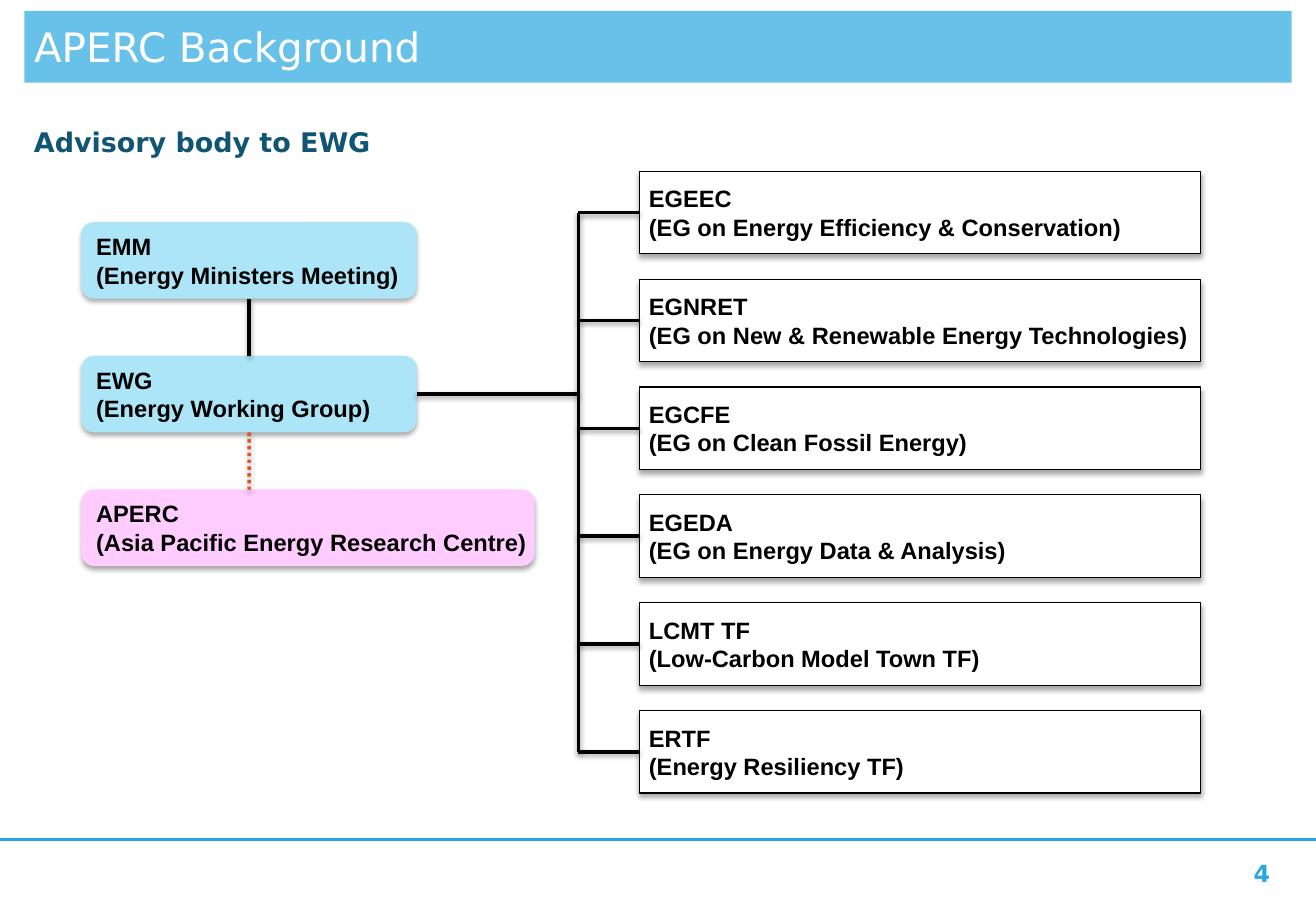
from lxml import etree
from pptx import Presentation
from pptx.dml.color import RGBColor
from pptx.enum.dml import MSO_LINE
from pptx.enum.shapes import MSO_CONNECTOR, MSO_SHAPE
from pptx.enum.text import MSO_ANCHOR, MSO_AUTO_SIZE, PP_ALIGN
from pptx.oxml.ns import qn
from pptx.util import Inches, Pt

RECT, ROUND = MSO_SHAPE.RECTANGLE, MSO_SHAPE.ROUNDED_RECTANGLE
STRAIGHT = MSO_CONNECTOR.STRAIGHT
DOTS = MSO_LINE.ROUND_DOT
MIDDLE = MSO_ANCHOR.MIDDLE
LEFT, CENTER = PP_ALIGN.LEFT, PP_ALIGN.CENTER
TOP, WEST, BOTTOM, EAST = range(4)

COLORS = {
    "accent": "28A7E1", "heading": "105574", "white": "FFFFFF", "black": "000000",
    "blue": "ABE5F7", "pink": "FFCCFF", "orange": "DF5327",
}
HEAD_FONT, BOX_FONT = "DejaVu Sans", "Arial"

BODIES = [
    ("EMM", "(Energy Ministers Meeting)", 2.76, "blue"),
    ("EWG", "(Energy Working Group)", 2.76, "blue"),
    ("APERC", "(Asia Pacific Energy Research Centre)", 3.73, "pink"),
]
GROUPS = [
    ("EGEEC", "(EG on Energy Efficiency & Conservation)"),
    ("EGNRET", "(EG on New & Renewable Energy Technologies)"),
    ("EGCFE", "(EG on Clean Fossil Energy)"),
    ("EGEDA", "(EG on Energy Data & Analysis)"),
    ("LCMT TF", "(Low-Carbon Model Town TF)"),
    ("ERTF", "(Energy Resiliency TF)"),
]
BODY_TOP, BODY_STEP = 1.83, 1.1
GROUP_TOP, GROUP_END = 1.41, 5.85
TRUNK = 4.76


def rgb(name):
    return RGBColor.from_string(COLORS[name])


def add_shadow(shape, alpha, dist):
    """Add a soft shadow below; call after fill and line are set."""
    effects = etree.SubElement(shape._element.spPr, qn("a:effectLst"))
    outer = etree.SubElement(effects, qn("a:outerShdw"), blurRad=str(Pt(3.1)),
                             dist=str(Pt(dist)), dir="5400000", rotWithShape="0")
    color = etree.SubElement(outer, qn("a:srgbClr"), val=COLORS["black"])
    etree.SubElement(color, qn("a:alpha"), val=str(alpha * 1000))


def set_text(shape, lines, font, size, color, bold=True, align=LEFT, pad=(0.08, 0)):
    frame = shape.text_frame
    frame.auto_size = MSO_AUTO_SIZE.NONE
    frame.word_wrap = True
    frame.vertical_anchor = MIDDLE
    frame.margin_left, frame.margin_right = Inches(pad[0]), Inches(pad[1])
    frame.margin_top = frame.margin_bottom = 0
    for i, line in enumerate(lines):
        para = frame.add_paragraph() if i else frame.paragraphs[0]
        para.alignment = align
        run = para.add_run()
        run.text = line
        run.font.name, run.font.size, run.font.bold = font, Pt(size), bold
        run.font.color.rgb = rgb(color)


def add_title(slide, text):
    title = slide.shapes.title
    title.left, title.top = Inches(0.2), Inches(0.09)
    title.width, title.height = Inches(10.43), Inches(0.59)
    title.fill.solid()
    title.fill.fore_color.rgb = rgb("accent")
    color = title._element.spPr.find(qn("a:solidFill"))[0]
    etree.SubElement(color, qn("a:alpha"), val="70000")
    set_text(title, [text], HEAD_FONT, 24, "white", bold=False)


def add_label(slide, text, box, size, color, align=LEFT):
    label = slide.shapes.add_textbox(*map(Inches, box))
    set_text(label, [text], HEAD_FONT, size, color, align=align)


def add_box(slide, kind, box, lines, fill, pad, edge=None):
    shape = slide.shapes.add_shape(kind, *map(Inches, box))
    shape.fill.solid()
    shape.fill.fore_color.rgb = rgb(fill)
    if edge:
        shape.line.color.rgb = rgb(edge)
        shape.line.width = Pt(0.75)
    else:
        shape.line.fill.background()
    add_shadow(shape, 35, 1.8)
    set_text(shape, lines, BOX_FONT, 14, "black", pad=(pad, 0))
    return shape


def add_line(slide, start, end, color="black", width=2, dash=None, shadow=True):
    """Draw a line; each end is an (x, y) point or a (shape, side) pair."""
    line = slide.shapes.add_connector(STRAIGHT, 0, 0, 0, 0)
    if isinstance(start[0], (int, float)):
        line.begin_x, line.begin_y = map(Inches, start)
    else:
        line.begin_connect(*start)
    if isinstance(end[0], (int, float)):
        line.end_x, line.end_y = map(Inches, end)
    else:
        line.end_connect(*end)
    line.line.color.rgb = rgb(color)
    line.line.width = Pt(width)
    if dash:
        line.line.dash_style = dash
    if shadow:
        add_shadow(line, 38, 1.6)
    else:
        etree.SubElement(line._element.spPr, qn("a:effectLst"))


def add_chain(slide):
    """Stack the main bodies, link them and return the working group."""
    boxes = [
        add_box(slide, ROUND, (0.67, BODY_TOP + i * BODY_STEP, width, 0.63),
                (name, note), fill, 0.09)
        for i, (name, note, width, fill) in enumerate(BODIES)
    ]
    meeting, working, centre = boxes
    add_line(slide, (meeting, BOTTOM), (working, TOP))
    add_line(slide, (working, BOTTOM), (2.05, centre.top.inches), "orange", dash=DOTS)
    return working


def add_groups(slide, working):
    """Stack the expert groups and branch to them from the trunk."""
    step = (GROUP_END - GROUP_TOP) / (len(GROUPS) - 1)
    mids = []
    for i, lines in enumerate(GROUPS):
        top = GROUP_TOP + i * step
        box = add_box(slide, RECT, (5.26, top, 4.62, 0.68), lines, "white", 0.08, "black")
        mids.append(top + 0.34)
        add_line(slide, (TRUNK, mids[-1]), (box, WEST))
    add_line(slide, (TRUNK, mids[0]), (TRUNK, mids[-1]))
    add_line(slide, (working, EAST), (TRUNK, BODY_TOP + BODY_STEP + 0.315))


def main():
    deck = Presentation()
    deck.slide_width, deck.slide_height = Inches(10.83), Inches(7.5)
    slide = deck.slides.add_slide(deck.slide_layouts[5])
    add_title(slide, "APERC Background")
    add_label(slide, "Advisory body to EWG", (0.2, 0.93, 10.43, 0.47), 16, "heading")
    add_groups(slide, add_chain(slide))
    add_line(slide, (0, 6.91), (10.83, 6.91), "accent", 1.5, shadow=False)
    add_label(slide, "4", (10.09, 7.09, 0.51, 0.2), 14, "accent", CENTER)
    deck.save("out.pptx")


if __name__ == "__main__":
    main()
